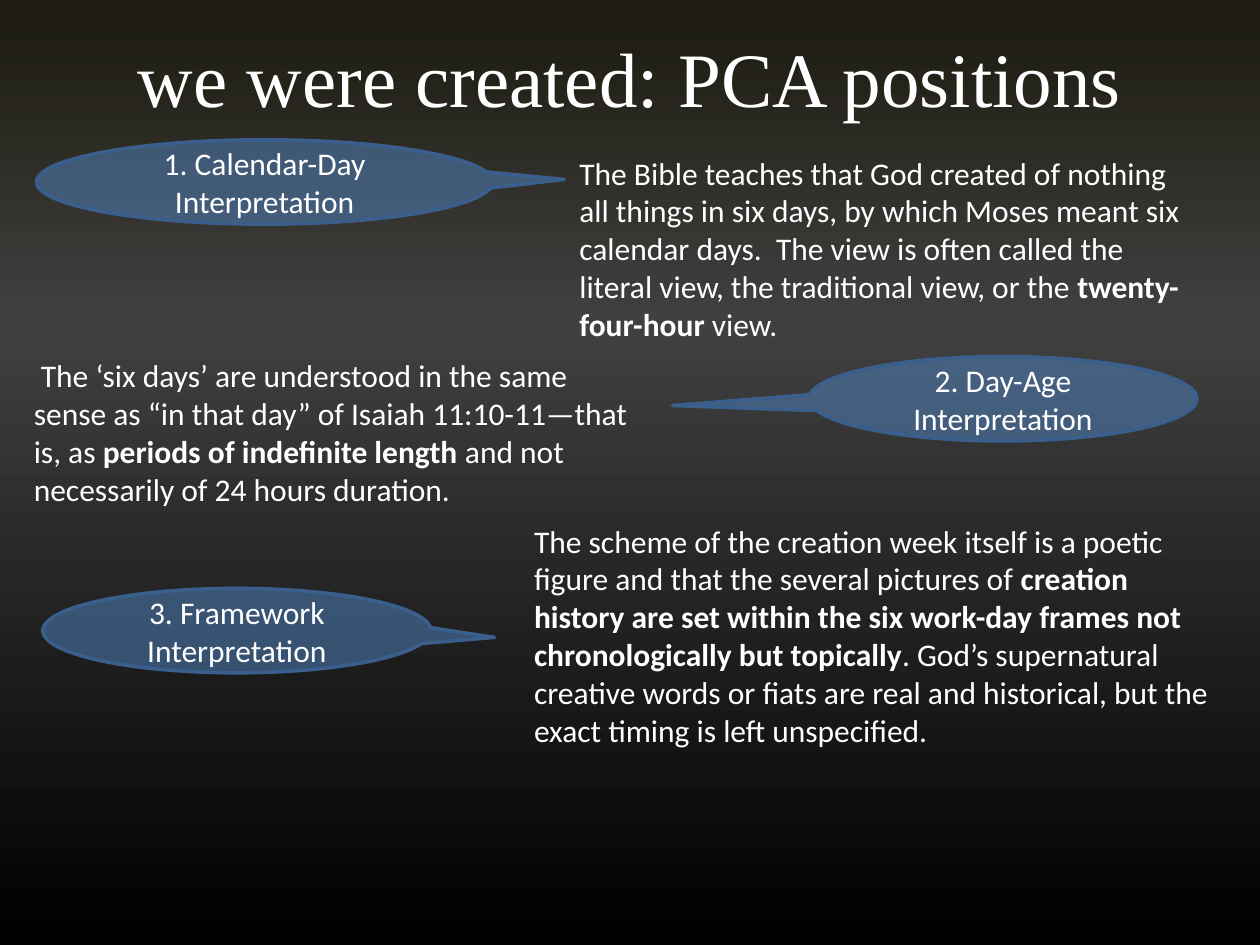
from copy import deepcopy

from pptx import Presentation
from pptx.dml.color import RGBColor
from pptx.enum.shapes import MSO_SHAPE
from pptx.enum.text import MSO_ANCHOR, MSO_AUTO_SIZE, PP_ALIGN
from pptx.oxml.ns import qn
from pptx.oxml.xmlchemy import OxmlElement
from pptx.util import Inches, Pt


def color(hex_string):
    return RGBColor.from_string(hex_string)


def add_run(paragraph, text, size=18, font="Calibri", bold=False):
    run = paragraph.add_run()
    run.text = text
    run.font.size = Pt(size)
    run.font.name = font
    run.font.bold = bold
    run.font.color.rgb = color("FFFFFF")


presentation = Presentation()
presentation.slide_width = Inches(10)
presentation.slide_height = Inches(7.5)
slide = presentation.slides.add_slide(presentation.slide_layouts[5])

# Vertical background gradient, lightest a third of the way down
background = slide.background.fill
background.gradient()
background.gradient_angle = 270
stop_list = slide.element.find(".//" + qn("a:gsLst"))
stop_list.append(deepcopy(stop_list[0]))
gradient = [(0.02, "1E1C11"), (0.34, "404040"), (1, "000000")]
for stop, (position, shade) in zip(background.gradient_stops, gradient):
    stop.position = position
    stop.color.rgb = color(shade)

title = slide.shapes.title
title.left, title.top = Inches(0.5), Inches(0.17)
title.width, title.height = Inches(9), Inches(0.88)
title.text_frame.vertical_anchor = MSO_ANCHOR.MIDDLE
heading = title.text_frame.paragraphs[0]
heading.alignment = PP_ALIGN.CENTER
add_run(heading, "we were created: PCA positions", 44, "Times New Roman")

# Each position: name, callout box, callout tip, description box,
# description as plain, bold and plain text
positions = [
    ("1. Calendar-Day Interpretation",
     (0.29, 1.11, 3.62, 0.67), (0.657, -0.031), (4.5, 1.17, 5, 1.62),
     ("The Bible teaches that God created of nothing all things in six days, "
      "by which Moses meant six calendar days.  The view is often called the "
      "literal view, the traditional view, or the ",
      "twenty-four-hour",
      " view.")),
    ("2. Day-Age Interpretation",
     (6.42, 2.83, 3.08, 0.67), (-0.852, 0.081), (0.17, 2.78, 5, 1.31),
     (" The ‘six days’ are understood in the same sense as “in that day” of "
      "Isaiah 11:10-11—that is, as ",
      "periods of indefinite length",
      " and not necessarily of 24 hours duration.")),
    ("3. Framework Interpretation",
     (0.34, 4.67, 3.08, 0.67), (0.664, 0.081), (4.14, 4.09, 5.58, 1.92),
     ("The scheme of the creation week itself is a poetic figure and that the "
      "several pictures of ",
      "creation history are set within the six work-day frames not "
      "chronologically but topically",
      ". God’s supernatural creative words or fiats are real and historical, "
      "but the exact timing is left unspecified.")),
]

for name, callout_box, tip, description_box, description in positions:
    callout = slide.shapes.add_shape(
        MSO_SHAPE.OVAL_CALLOUT, *map(Inches, callout_box))
    callout.adjustments[0], callout.adjustments[1] = tip
    callout.shadow.inherit = False
    callout.fill.solid()
    callout.fill.fore_color.rgb = color("4F81BD")
    alpha = OxmlElement("a:alpha")
    alpha.set("val", "53000")
    callout.fill._xPr.find(".//" + qn("a:srgbClr")).append(alpha)
    callout.line.color.rgb = color("3A5F8C")
    callout.line.width = Pt(2)
    callout.text_frame.word_wrap = True
    callout.text_frame.vertical_anchor = MSO_ANCHOR.MIDDLE
    label = callout.text_frame.paragraphs[0]
    label.alignment = PP_ALIGN.CENTER
    add_run(label, name)

    explanation = slide.shapes.add_textbox(*map(Inches, description_box))
    explanation.text_frame.word_wrap = True
    explanation.text_frame.auto_size = MSO_AUTO_SIZE.SHAPE_TO_FIT_TEXT
    for part, bold in zip(description, (False, True, False)):
        add_run(explanation.text_frame.paragraphs[0], part, bold=bold)

presentation.save("out.pptx")
